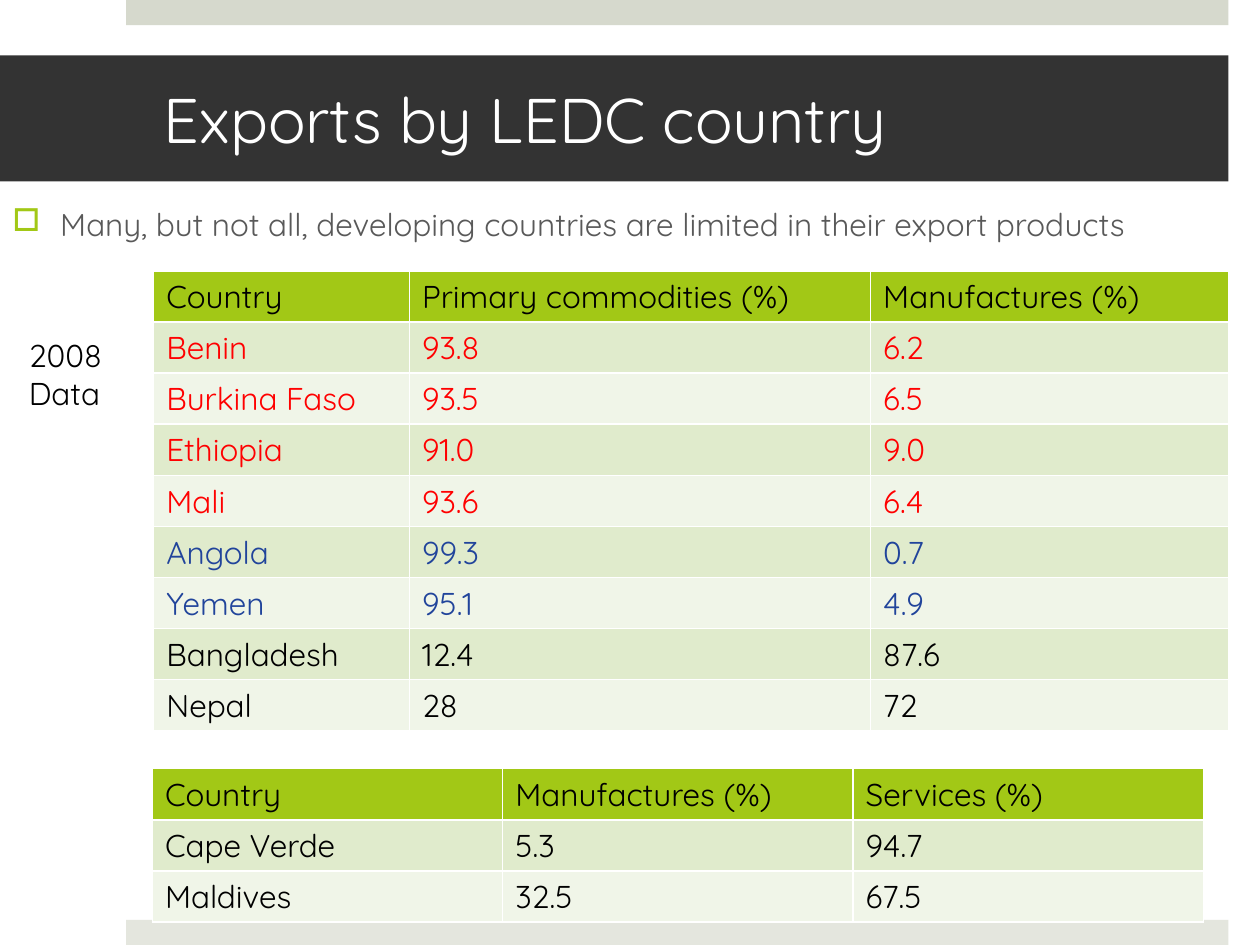
from dataclasses import dataclass

from lxml import etree
from pptx import Presentation
from pptx.dml.color import RGBColor
from pptx.enum.shapes import MSO_SHAPE
from pptx.enum.text import MSO_ANCHOR, PP_ALIGN
from pptx.oxml.ns import qn
from pptx.shapes.autoshape import Shape
from pptx.slide import Slide
from pptx.text.text import TextFrame
from pptx.util import Inches, Pt

RECT = MSO_SHAPE.RECTANGLE
MIDDLE = MSO_ANCHOR.MIDDLE
TOP = MSO_ANCHOR.TOP
LEFT = PP_ALIGN.LEFT

WHITE = RGBColor(0xFF, 0xFF, 0xFF)
BLACK = RGBColor(0x00, 0x00, 0x00)
DARK = RGBColor(0x33, 0x33, 0x33)
GREY = RGBColor(0x59, 0x59, 0x59)
RED = RGBColor(0xFF, 0x00, 0x00)
BLUE = RGBColor(0x21, 0x44, 0x9B)
LIME = RGBColor(0xA2, 0xC8, 0x16)
BANDS = (RGBColor(0xE0, 0xEB, 0xCC), RGBColor(0xF0, 0xF5, 0xE8))
SAGE = RGBColor(0xD6, 0xD9, 0xCD)
PALE = RGBColor(0xE4, 0xE6, 0xDE)

BASE = {"name": "Quicksand", "size": Pt(18), "bold": False}


@dataclass
class Box:
    left: float
    top: float
    width: float
    height: float

    def place(self) -> tuple:
        return tuple(Inches(v) for v in (self.left, self.top, self.width, self.height))


@dataclass
class Bar:
    box: Box
    fill: RGBColor


@dataclass
class Row:
    cells: tuple[str, ...]
    ink: RGBColor = BLACK


@dataclass
class Grid:
    box: Box
    widths: tuple[float, ...]
    rows: list[Row]


BARS = [
    Bar(Box(1, 0, 8.75, 0.2), SAGE),
    Bar(Box(1, 7.3, 8.75, 0.2), PALE),
    Bar(Box(0, 0.44, 9.75, 1), DARK),
]

GRIDS = [
    Grid(Box(1.22, 2.15, 8.53, 3.65), (2.03, 3.66, 2.84), [
        Row(("Country", "Primary commodities (%)", "Manufactures (%)")),
        Row(("Benin", "93.8", "6.2"), RED),
        Row(("Burkina Faso", "93.5", "6.5"), RED),
        Row(("Ethiopia", "91.0", "9.0"), RED),
        Row(("Mali", "93.6", "6.4"), RED),
        Row(("Angola", "99.3", "0.7"), BLUE),
        Row(("Yemen", "95.1", "4.9"), BLUE),
        Row(("Bangladesh", "12.4", "87.6")),
        Row(("Nepal", "28", "72")),
    ]),
    Grid(Box(1.21, 6.1, 8.33, 1.22), (2.78, 2.78, 2.78), [
        Row(("Country", "Manufactures (%)", "Services (%)")),
        Row(("Cape Verde", "5.3", "94.7")),
        Row(("Maldives", "32.5", "67.5")),
    ]),
]


def write(frame: TextFrame, text: str, ink: RGBColor, **extra) -> None:
    frame.text = text
    for para in frame.paragraphs:
        para.alignment = LEFT
        for run in para.runs:
            for key, value in (BASE | extra).items():
                setattr(run.font, key, value)
            run.font.color.rgb = ink


def draw_bar(slide: Slide, bar: Bar) -> Shape:
    shape = slide.shapes.add_shape(RECT, *bar.box.place())
    shape.shadow.inherit = False
    shape.fill.solid()
    shape.fill.fore_color.rgb = bar.fill
    shape.line.fill.background()
    return shape


def draw_text(slide: Slide, box: Box, text: str, ink: RGBColor, wrap: bool) -> TextFrame:
    frame = slide.shapes.add_textbox(*box.place()).text_frame
    frame.word_wrap = wrap
    frame.vertical_anchor = TOP
    write(frame, text, ink)
    return frame


def add_bullet(frame: TextFrame, mark: str, ink: RGBColor) -> None:
    para = frame.paragraphs[0]
    para.space_before = Pt(20)
    props = para._p.get_or_add_pPr()
    props.set("marL", str(Inches(0.38)))
    props.set("indent", str(Inches(-0.38)))
    color = etree.SubElement(props, qn("a:buClr"))
    etree.SubElement(color, qn("a:srgbClr")).set("val", str(ink))
    etree.SubElement(props, qn("a:buChar")).set("char", mark)


def draw_grid(slide: Slide, grid: Grid) -> None:
    count = len(grid.rows)
    table = slide.shapes.add_table(count, len(grid.widths), *grid.box.place()).table
    for col, width in zip(table.columns, grid.widths):
        col.width = Inches(width)
    for i, row in enumerate(grid.rows):
        table.rows[i].height = Inches(grid.box.height / count)
        for cell, text in zip(table.rows[i].cells, row.cells):
            cell.fill.solid()
            cell.fill.fore_color.rgb = BANDS[(i - 1) % 2] if i else LIME
            write(cell.text_frame, text, row.ink)


def main() -> None:
    """Build the slide on exports by country."""
    deck = Presentation()
    deck.slide_width, deck.slide_height = Inches(10), Inches(7.5)
    slide = deck.slides.add_slide(deck.slide_layouts[6])

    title = [draw_bar(slide, bar) for bar in BARS][-1].text_frame
    form = {"margin_left": Inches(1.3), "margin_right": Inches(0.3),
            "vertical_anchor": MIDDLE, "word_wrap": True}
    for key, value in form.items():
        setattr(title, key, value)
    write(title, "Exports by LEDC country", WHITE, size=Pt(36))

    point = draw_text(
        slide, Box(0, 1.58, 9.54, 0.5),
        "Many, but not all, developing countries are limited in their export products",
        GREY, True)
    add_bullet(point, "□", LIME)
    draw_text(slide, Box(0.13, 2.62, 0.82, 0.71), "2008\nData", BLACK, False)
    for grid in GRIDS:
        draw_grid(slide, grid)
    deck.save("out.pptx")


if __name__ == "__main__":
    main()
